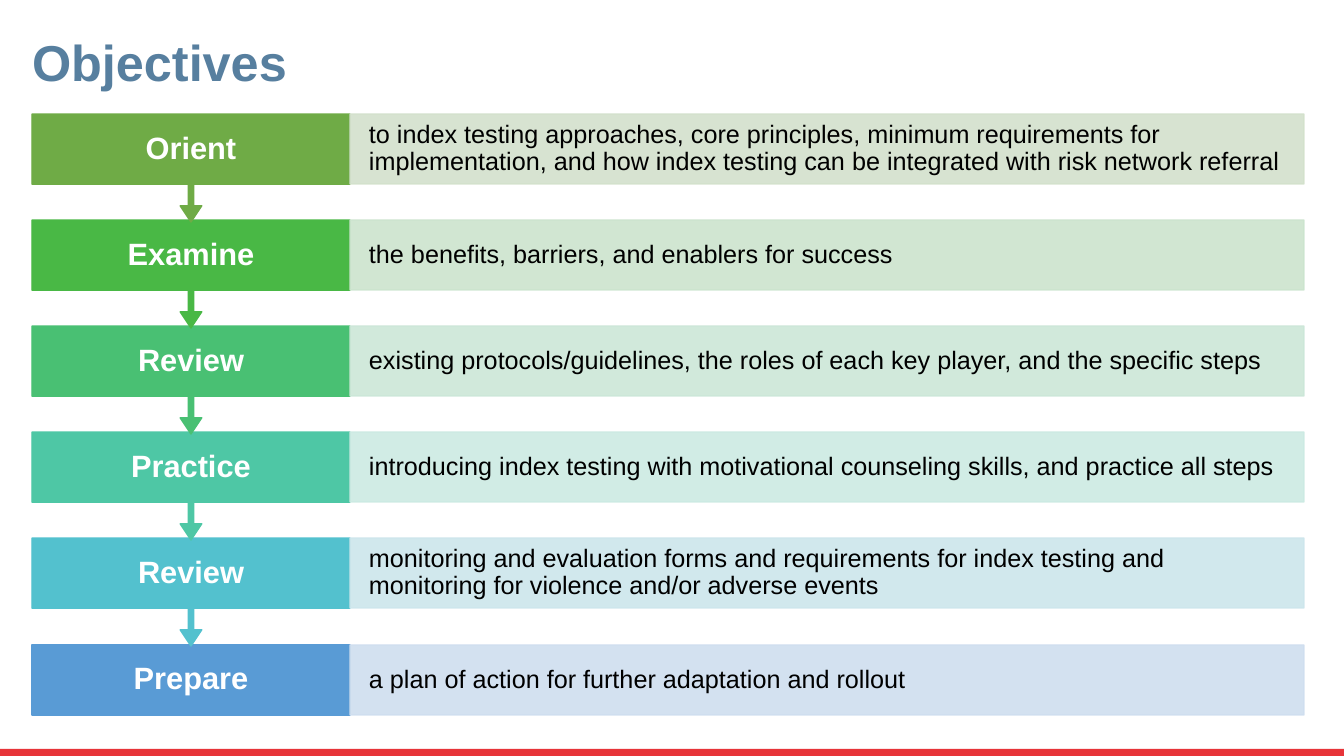
from lxml.etree import SubElement
from pptx import Presentation
from pptx.dml.color import RGBColor
from pptx.enum.shapes import MSO_SHAPE as Preset
from pptx.enum.text import MSO_ANCHOR as Anchor, MSO_AUTO_SIZE as AutoSize, PP_ALIGN as Align
from pptx.oxml.ns import qn
from pptx.util import Emu, Pt

TITLE = "Objectives"
STEPS = [
    ("Orient", "to index testing approaches, core principles, minimum requirements for "
     "implementation, and how index testing can be integrated with risk network referral",
     "6FAB46", "D3E1CC"),
    ("Examine", "the benefits, barriers, and enablers for success",
     "49B845", "CCE4CE"),
    ("Review", "existing protocols/guidelines, the roles of each key player, and the specific steps",
     "49C073", "CCE7D8"),
    ("Practice", "introducing index testing with motivational counseling skills, and practice all steps",
     "4EC7A5", "CCEAE3"),
    ("Review", "monitoring and evaluation forms and requirements for index testing and "
     "monitoring for violence and/or adverse events",
     "53C1CE", "CDE6EC"),
    ("Prepare", "a plan of action for further adaptation and rollout",
     "599BD5", "CFDEEF"),
]
COLORS = {"title": "577F9F", "bar": "E73439", "label": "FFFFFF", "detail": "000000"}
FONT = "Arial"

# Lengths in px
SLIDE_W, SLIDE_H = 1344, 756
BAR_TOP, BAR_H = 749, 8
TITLE_BOX = (22, 21, 1159, 88)
LABEL_X, LABEL_W = 32, 318
DETAIL_X, DETAIL_W = 350, 954
FIRST_TOP, LAST_TOP = 114, 645
ROW_H, CALLOUT_H = 70, 108
LABEL_INSET, DETAIL_INSET = 22, 19
CALLOUT_SHAPE = (0.05, 0.1, 0.15, 0.65)
DETAIL_OPACITY = 90


def px(length):
    return Emu(round(length * 914400 / 100.8))


def set_text(shape, text, size, color, align, bold=False):
    frame = shape.text_frame
    frame.word_wrap = True
    frame.auto_size = AutoSize.NONE
    frame.vertical_anchor = Anchor.MIDDLE
    para = frame.paragraphs[0]
    para.alignment = align
    para.line_spacing = 0.9
    span = para.add_run()
    span.text = text
    span.font.name = FONT
    span.font.size = Pt(size)
    span.font.bold = bold
    span.font.color.rgb = RGBColor.from_string(color)


def add_block(page, preset, box, color, opacity=100):
    """Add a shape whose fill and outline share one colour."""
    shape = page.shapes.add_shape(preset, *map(px, box))
    shape.shadow.inherit = False
    shape.fill.solid()
    shape.line.width = Pt(1)
    for paint in (shape.fill.fore_color, shape.line.color):
        paint.rgb = RGBColor.from_string(color)
    if opacity < 100:
        for swatch in shape.element.spPr.iter(qn("a:srgbClr")):
            SubElement(swatch, qn("a:alpha"), val=str(opacity * 1000))
    return shape


def set_insets(shape, side):
    frame = shape.text_frame
    frame.margin_left = frame.margin_right = px(side)
    frame.margin_top = frame.margin_bottom = 0


def add_step(page, index):
    label, detail, strong, pale = STEPS[index]
    last = len(STEPS) - 1
    top = FIRST_TOP + (LAST_TOP - FIRST_TOP) * index // last
    if index == last:
        head = add_block(page, Preset.RECTANGLE, (LABEL_X, top, LABEL_W, ROW_H), strong)
    else:
        head = add_block(page, Preset.DOWN_ARROW_CALLOUT,
                         (LABEL_X, top, LABEL_W, CALLOUT_H), strong)
        for position, value in enumerate(CALLOUT_SHAPE):
            head.adjustments[position] = value
    set_insets(head, LABEL_INSET)
    set_text(head, label, 22, COLORS["label"], Align.CENTER, bold=True)

    body = add_block(page, Preset.RECTANGLE, (DETAIL_X, top, DETAIL_W, ROW_H),
                     pale, DETAIL_OPACITY)
    set_insets(body, DETAIL_INSET)
    set_text(body, detail, 18, COLORS["detail"], Align.LEFT)


def main():
    deck = Presentation()
    deck.slide_width, deck.slide_height = px(SLIDE_W), px(SLIDE_H)
    page = deck.slides.add_slide(deck.slide_layouts[5])

    bar = add_block(page, Preset.RECTANGLE, (0, BAR_TOP, SLIDE_W, BAR_H), COLORS["bar"])
    bar.line.fill.background()

    title = page.shapes.title
    title.left, title.top, title.width, title.height = map(px, TITLE_BOX)
    set_text(title, TITLE, 36, COLORS["title"], Align.LEFT, bold=True)

    # Bottom row first, so that each arrow tip lies over the row below it
    for index in reversed(range(len(STEPS))):
        add_step(page, index)
    deck.save("out.pptx")


if __name__ == "__main__":
    main()
